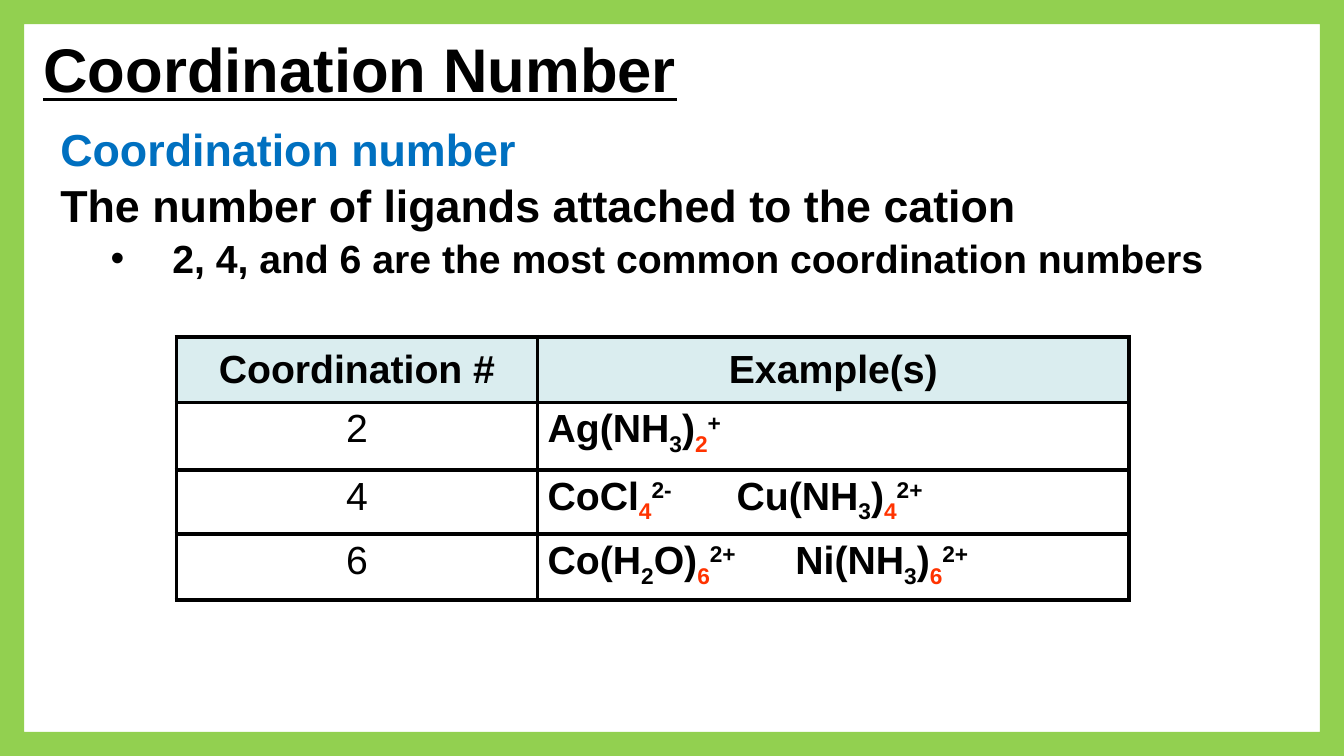
from dataclasses import dataclass

from lxml import etree
from pptx import Presentation
from pptx import util as u
from pptx.dml.color import RGBColor
from pptx.enum import shapes, text
from pptx.oxml import ns


@dataclass(frozen=True)
class Theme:
    font: str = "Arial"
    ink: str = "000000"
    heading: str = "0070C0"
    count: str = "FF3300"
    header_fill: str = "DAEDEF"
    cell_fill: str = "FFFFFF"
    frame: str = "92D050"
    title_size: int = 44
    lead_size: int = 32
    body_size: int = 28
    border: int = 3


def add_span(para, words, size, font, color, bold=True, underline=False, baseline=0):
    """Add one formatted run; baseline is a percentage shift."""
    span = para.add_run()
    span.text = words
    span.font.name = font
    span.font.size = u.Pt(size)
    span.font.bold = bold
    span.font.underline = underline
    span.font.color.rgb = RGBColor.from_string(color)
    if baseline:
        span.font._element.set("baseline", str(baseline * 1000))
    return span


def add_child(parent, tag, **attributes):
    child = etree.SubElement(parent, ns.qn(tag))
    for name, value in attributes.items():
        child.set(name, str(value))
    return child


class SlideBuilder:
    def __init__(self, slide, theme):
        self.slide = slide
        self.theme = theme

    def span(self, para, words, size, color=None, **style):
        return add_span(para, words, size, self.theme.font, color or self.theme.ink, **style)

    def text_box(self, left, top, width, height, anchor=text.MSO_ANCHOR.TOP):
        box = self.slide.shapes.add_textbox(*map(u.Pt, (left, top, width, height)))
        box.text_frame.word_wrap = True
        box.text_frame.vertical_anchor = anchor
        return box.text_frame

    def bullet(self, para, margin, hanging):
        para.level = 1
        props = para._p.get_or_add_pPr()
        props.set("marL", str(u.Pt(margin)))
        props.set("indent", str(-u.Pt(hanging)))
        add_child(props, "a:buFont", typeface=self.theme.font)
        add_child(props, "a:buChar", char="•")

    def border(self, cell):
        props = cell._tc.get_or_add_tcPr()
        for side in ("a:lnL", "a:lnR", "a:lnT", "a:lnB"):
            line = add_child(props, side, w=u.Pt(self.theme.border))
            fill = add_child(line, "a:solidFill")
            add_child(fill, "a:srgbClr", val=self.theme.ink)

    def cell(self, cell, spans, header=False, centered=False, tab=None):
        self.border(cell)
        cell.fill.solid()
        fill = self.theme.header_fill if header else self.theme.cell_fill
        cell.fill.fore_color.rgb = RGBColor.from_string(fill)
        cell.vertical_anchor = text.MSO_ANCHOR.MIDDLE if header else text.MSO_ANCHOR.TOP
        para = cell.text_frame.paragraphs[0]
        para.alignment = text.PP_ALIGN.CENTER if centered else text.PP_ALIGN.LEFT
        if tab:
            stops = add_child(para._p.get_or_add_pPr(), "a:tabLst")
            add_child(stops, "a:tab", pos=u.Pt(tab), algn="l")
        for words, style in spans:
            self.span(para, words, self.theme.body_size, **style)

    def table(self, left, top, widths, heights):
        frame = self.slide.shapes.add_table(
            len(heights), len(widths),
            *map(u.Pt, (left, top, sum(widths), sum(heights))))
        table = frame.table
        table.first_row = table.horz_banding = False
        for column, width in zip(table.columns, widths):
            column.width = u.Pt(width)
        for row, height in zip(table.rows, heights):
            row.height = u.Pt(height)
        return table

    def frame(self, width, height, thickness):
        shape = self.slide.shapes.add_shape(
            shapes.MSO_SHAPE.FRAME, 0, 0, u.Pt(width), u.Pt(height))
        shape.adjustments[0] = thickness
        shape.shadow.inherit = False
        shape.fill.solid()
        shape.fill.fore_color.rgb = RGBColor.from_string(self.theme.frame)
        shape.line.fill.background()


def complex_ion(theme, metal, ligand, count, charge):
    """Spans of a complex ion; ligand is (before, subscript, after) or a plain symbol."""
    if isinstance(ligand, str):
        spans = [(metal + ligand, {})]
    else:
        before, subscript, after = ligand
        spans = [(f"{metal}({before}", {}), (subscript, {"baseline": -25}), (f"{after})", {})]
    return spans + [(count, {"color": theme.count, "baseline": -25}),
                    (charge, {"baseline": 30})]


def main():
    width, height = 960, 540
    theme = Theme()
    deck = Presentation()
    deck.slide_width, deck.slide_height = u.Pt(width), u.Pt(height)
    page = SlideBuilder(deck.slides.add_slide(deck.slide_layouts[6]), theme)

    # Title
    title = page.text_box(24, 16, 872.5, 65.5, text.MSO_ANCHOR.MIDDLE)
    page.span(title.paragraphs[0], "Coordination Number", theme.title_size, underline=True)

    # Definition
    definition = page.text_box(36, 81.5, 885, 119)
    lines = [
        ("Coordination number", theme.lead_size, theme.heading),
        ("The number of ligands attached to the cation", theme.lead_size, theme.ink),
        ("2, 4, and 6 are the most common coordination numbers", theme.body_size, theme.ink),
    ]
    for index, (words, size, color) in enumerate(lines):
        para = definition.add_paragraph() if index else definition.paragraphs[0]
        para.line_spacing = 1.05
        page.span(para, words, size, color)
    page.bullet(para, margin=80, hanging=44)

    # Examples, with a tab stop where a second ion starts
    ammonia, water = ("NH", "3", ""), ("H", "2", "O")
    examples = [
        ("2", [("Ag", ammonia, "2", "+")], None),
        ("4", [("Co", "Cl", "4", "2-"), ("Cu", ammonia, "4", "2+")], 135),
        ("6", [("Co", water, "6", "2+"), ("Ni", ammonia, "6", "2+")], 177),
    ]
    table = page.table(126, 240.5, [258, 422.5], [47, 48, 46, 47])
    for column, words in enumerate(("Coordination #", "Example(s)")):
        page.cell(table.cell(0, column), [(words, {})], header=True, centered=True)
    for row, (number, ions, tab) in enumerate(examples, start=1):
        spans = []
        for ion in ions:
            if spans:
                spans.append(("\t", {}))
            spans += complex_ion(theme, *ion)
        page.cell(table.cell(row, 0), [(number, {"bold": False})], centered=True)
        page.cell(table.cell(row, 1), spans, tab=tab)

    # Slide frame
    page.frame(width, height, 0.032)

    deck.save("out.pptx")


if __name__ == "__main__":
    main()
